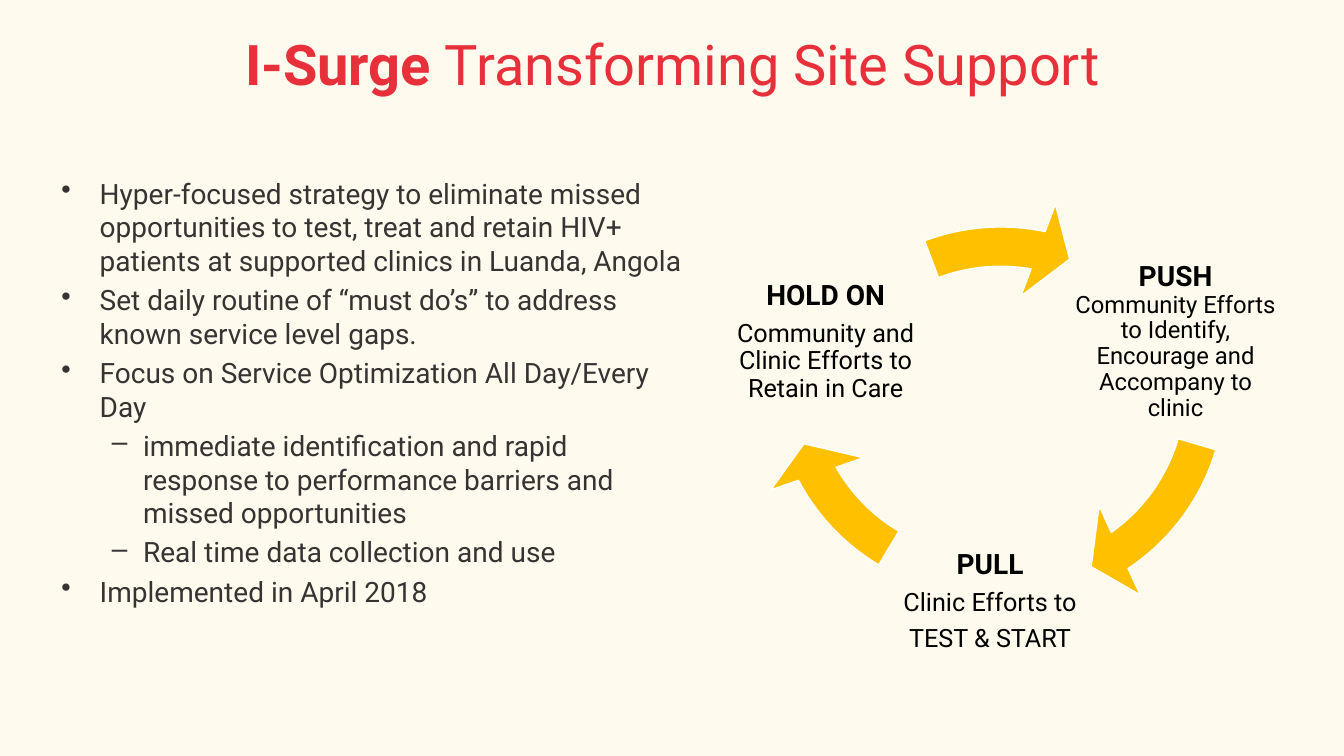
from dataclasses import dataclass
from lxml.etree import SubElement
from pptx import Presentation
from pptx.dml.color import RGBColor
from pptx.enum.shapes import MSO_SHAPE
from pptx.enum.text import MSO_ANCHOR, MSO_AUTO_SIZE, PP_ALIGN
from pptx.oxml.ns import qn
from pptx.util import Inches, Pt


@dataclass(frozen=True)
class Theme:
    font: str = "Roboto"
    back: str = "FFFAEE"
    title: str = "E8303B"
    body: str = "383333"
    ink: str = "000000"
    arrow: str = "FFC000"
    edge: str = "FFFFFF"
    big: int = 40
    text: int = 20


THEME = Theme()
WIDE, HIGH = Inches(13.33), Inches(7.5)

TITLE = [("I-Surge ", True), ("Transforming Site Support", False)]
TITLE_BOX = (4.65, 0, 90.77, 16.67)
LIST_BOX = (3.83, 22.67, 48.09, 66.53)
POINTS = [
    (0, "Hyper-focused strategy to eliminate missed opportunities to test, treat and retain HIV+ patients at supported clinics in Luanda, Angola"),
    (0, "Set daily routine of “must do’s” to address known service level gaps."),
    (0, "Focus on Service Optimization All Day/Every Day"),
    (1, "immediate identification and rapid response to performance barriers and missed opportunities"),
    (1, "Real time data collection and use"),
    (0, "Implemented in April 2018"),
]
LEVELS = [("•", 0.38, 0.38), ("–", 0.81, 0.31)]

STAGE_SIZE = (15.45, 27.47)
STAGES = [
    ((79.74, 31.47), 17, 0, "PUSH",
     ["Community Efforts to Identify, Encourage and Accompany to clinic"]),
    ((65.94, 65.8), 18, 7, "PULL", ["Clinic Efforts to", "TEST & START"]),
    ((53.71, 31.47), 18, 7, "HOLD ON",
     ["Community and Clinic Efforts to Retain in Care"]),
]

RING_SIZE = (36.53, 64.93)
BAND, HEAD, REACH = 0.08, 9.59, 0.1
ARROWS = [
    ((56.79, 18.93), 16.48, 55.57),
    ((55.36, 17.73), 120.83, 151.3),
    ((56.19, 26.13), 249.41, 281),
]


def scale(box):
    x, y, w, h = box
    return [round(part * side / 100)
            for part, side in ((x, WIDE), (y, HIGH), (w, WIDE), (h, HIGH))]


def style(run, size, color, bold=False):
    run.font.name = THEME.font
    run.font.size = Pt(size)
    run.font.bold = bold
    run.font.color.rgb = RGBColor.from_string(color)


def write(frame, lines):
    frame.word_wrap = True
    frame.text = "\n".join(lines)
    return frame.paragraphs


def add_title(slide):
    title = slide.shapes.title
    title.left, title.top, title.width, title.height = scale(TITLE_BOX)
    frame = title.text_frame
    frame.auto_size = MSO_AUTO_SIZE.NONE
    frame.vertical_anchor = MSO_ANCHOR.MIDDLE
    line = frame.paragraphs[0]
    line.alignment = PP_ALIGN.CENTER
    for text, bold in TITLE:
        run = line.add_run()
        run.text = text
        style(run, THEME.big, THEME.title, bold)


def add_list(slide):
    frame = slide.shapes.add_textbox(*scale(LIST_BOX)).text_frame
    lines = write(frame, [text for _, text in POINTS])
    for index, (line, (level, _)) in enumerate(zip(lines, POINTS)):
        mark, left, hang = LEVELS[level]
        line.level = level
        line.space_before = Pt(4 if index else 0)
        props = line._p.get_or_add_pPr()
        props.set("marL", str(Inches(left)))
        props.set("indent", str(-Inches(hang)))
        SubElement(props, qn("a:buChar")).set("char", mark)
        style(line.runs[0], THEME.text, THEME.body)


def add_stage(slide, spot, size, gap, head, notes):
    frame = slide.shapes.add_textbox(*scale(spot + STAGE_SIZE)).text_frame
    frame.vertical_anchor = MSO_ANCHOR.MIDDLE
    frame.margin_left = frame.margin_right = Inches(0.03)
    frame.margin_top = frame.margin_bottom = Inches(0.03)
    for index, line in enumerate(write(frame, [head] + notes)):
        line.alignment = PP_ALIGN.CENTER
        line.line_spacing = 0.9
        line.space_after = Pt(6 if index else gap)
        style(line.runs[0], size if index else THEME.text, THEME.ink, not index)


def add_arrow(slide, spot, start, end):
    arrow = slide.shapes.add_shape(MSO_SHAPE.CIRCULAR_ARROW, *scale(spot + RING_SIZE))
    turns = [angle * 0.6 for angle in (HEAD, end, start)]
    for index, value in enumerate([BAND, *turns, REACH]):
        arrow.adjustments[index] = value
    arrow.shadow.inherit = False
    arrow.fill.solid()
    arrow.fill.fore_color.rgb = RGBColor.from_string(THEME.arrow)
    arrow.line.color.rgb = RGBColor.from_string(THEME.edge)
    arrow.line.width = Pt(1)


def main():
    deck = Presentation()
    deck.slide_width, deck.slide_height = WIDE, HIGH
    slide = deck.slides.add_slide(deck.slide_layouts[5])
    fill = slide.background.fill
    fill.solid()
    fill.fore_color.rgb = RGBColor.from_string(THEME.back)
    add_title(slide)
    add_list(slide)
    for stage, arrow in zip(STAGES, ARROWS):
        add_stage(slide, *stage)
        add_arrow(slide, *arrow)
    deck.save("out.pptx")


if __name__ == "__main__":
    main()
